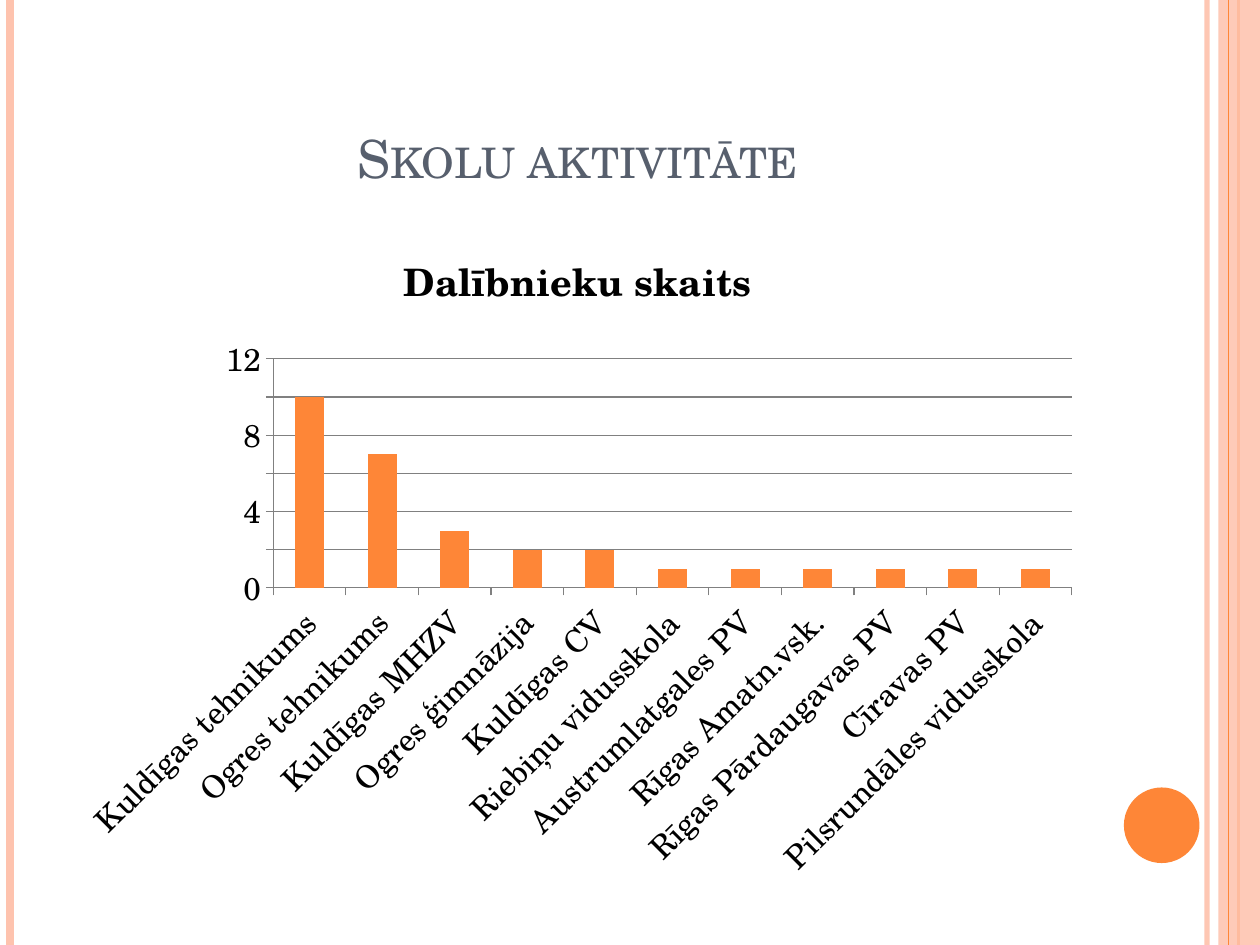
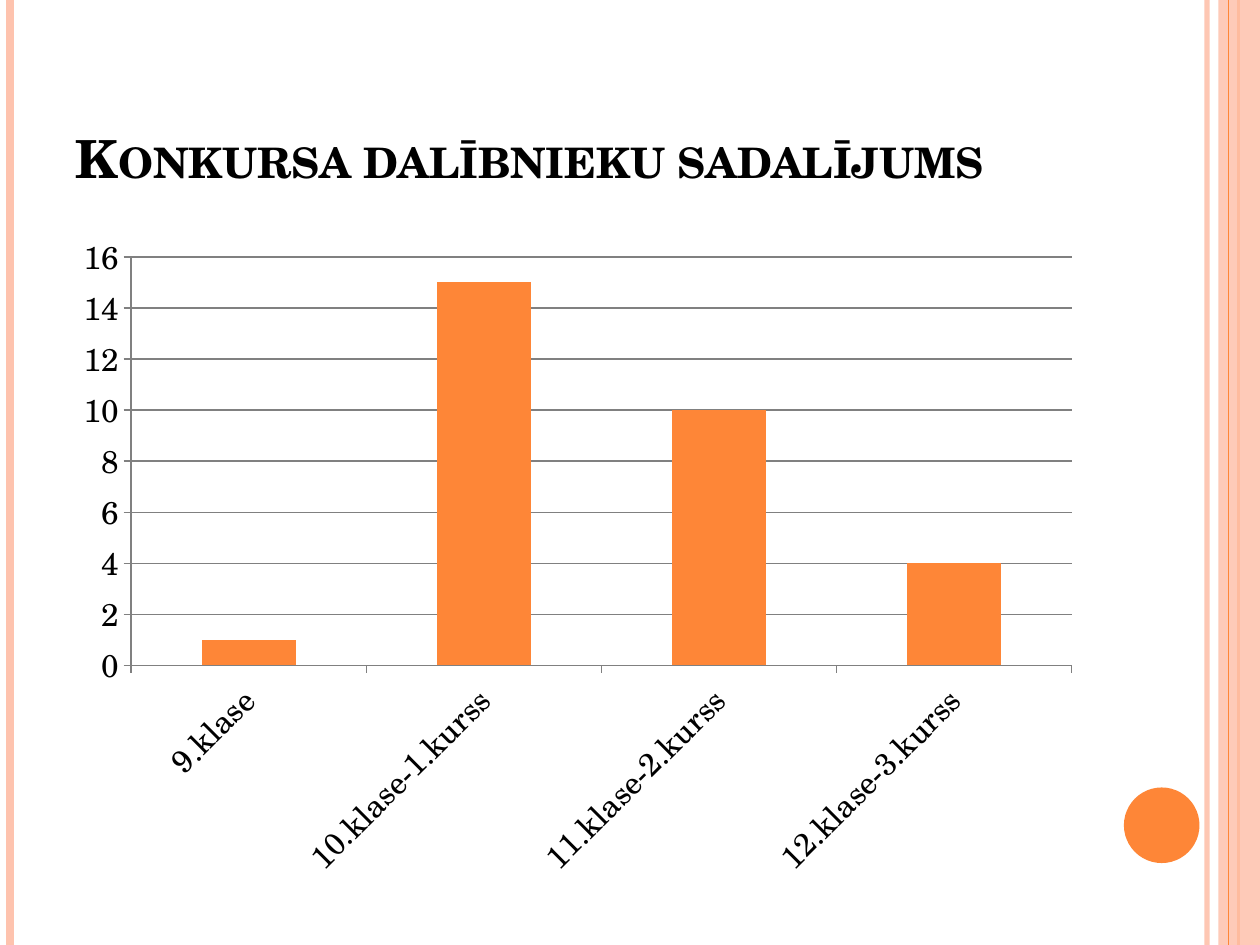
from dataclasses import dataclass

from lxml import etree
from pptx import Presentation
from pptx import util as u
from pptx.chart.data import CategoryChartData
from pptx.dml.color import RGBColor
from pptx.enum import chart as ch
from pptx.enum import shapes, text
from pptx.oxml.ns import qn

PX = 9144  # 100 px to the inch
WIDE, HIGH = 1000, 750
FONT = "TeX Gyre Schola"
HUES = {
    "orange": "FE8637",
    "peach": "FEC3AE",
    "slate": "575F6D",
    "black": "000000",
    "grid": "808080",
}


@dataclass
class Rule:
    x: int
    hue: str
    width: float
    alpha: int = 100


@dataclass
class Form:
    kind: shapes.MSO_SHAPE
    box: tuple[int, int, int, int]
    hue: str
    alpha: int = 100


@dataclass
class Page:
    title: str
    style: dict
    data: dict[str, int]
    head: str = ""


# Shared bands, from back to front
FRAME = [
    Rule(958, "peach", 3, 93),
    Rule(8, "peach", 4.5),
    Rule(983, "orange", 1.5),
    Form(shapes.MSO_SHAPE.RECTANGLE, (967, 0, 33, HIGH), "peach", 87),
    Rule(975, "orange", 0.75),
    Form(shapes.MSO_SHAPE.OVAL, (892, 625, 60, 60), "orange"),
]

PAGES = [
    Page(
        "Skolu aktivitāte",
        {"hue": "slate", "align": text.PP_ALIGN.CENTER},
        {
            "Kuldīgas tehnikums": 10,
            "Ogres tehnikums": 7,
            "Kuldīgas MHZV": 3,
            "Ogres ģimnāzija": 2,
            "Kuldīgas CV": 2,
            "Riebiņu vidusskola": 1,
            "Austrumlatgales PV": 1,
            "Rīgas Amatn.vsk.": 1,
            "Rīgas Pārdaugavas PV": 1,
            "Cīravas PV": 1,
            "Pilsrundāles vidusskola": 1,
        },
        "Dalībnieku skaits",
    ),
    Page(
        "Konkursa dalībnieku sadalījums",
        {"bold": True},
        {
            "9.klase": 1,
            "10.klase-1.kurss": 15,
            "11.klase-2.kurss": 10,
            "12.klase-3.kurss": 4,
        },
    ),
]


def px(*vals: int) -> list[u.Emu]:
    return [u.Emu(v * PX) for v in vals]


def rgb(hue: str) -> RGBColor:
    return RGBColor.from_string(HUES[hue])


def fade(item, alpha: int) -> None:
    """Set the opacity of the first colour in a shape."""
    if alpha < 100:
        tone = item._element.spPr.find(".//" + qn("a:srgbClr"))
        etree.SubElement(tone, qn("a:alpha")).set("val", str(alpha * 1000))


def ink(font, size: float, hue: str = "black", bold: bool = False) -> None:
    font.name, font.size, font.bold = FONT, u.Pt(size), bold
    font.color.rgb = rgb(hue)


def write(frame, words: str, *, size: float, hue: str = "black",
          bold: bool = False, caps: bool = False, align=None) -> None:
    para = frame.paragraphs[0]
    para.alignment = align
    run = para.add_run()
    run.text = words
    ink(run.font, size, hue, bold)
    if caps:
        run._r.get_or_add_rPr().set("cap", "small")


def draw_rule(slide, rule: Rule) -> None:
    line = slide.shapes.add_connector(
        shapes.MSO_CONNECTOR.STRAIGHT, *px(rule.x, 0, rule.x, HIGH))
    line.line.color.rgb = rgb(rule.hue)
    line.line.width = u.Pt(rule.width)
    fade(line, rule.alpha)
    etree.SubElement(line._element.spPr, qn("a:effectLst"))


def draw_form(slide, form: Form) -> None:
    item = slide.shapes.add_shape(form.kind, *px(*form.box))
    item.shadow.inherit = False
    item.fill.solid()
    item.fill.fore_color.rgb = rgb(form.hue)
    item.line.fill.background()
    fade(item, form.alpha)


def draw_title(slide, page: Page) -> None:
    frame = slide.shapes.add_textbox(*px(50, 30, 817, 125)).text_frame
    frame.word_wrap = True
    frame.vertical_anchor = text.MSO_ANCHOR.BOTTOM
    write(frame, page.title, size=30, caps=True, **page.style)


def draw_chart(slide, page: Page) -> None:
    data = CategoryChartData()
    data.categories = list(page.data)
    data.add_series("Series 1", list(page.data.values()))
    chart = slide.shapes.add_chart(
        ch.XL_CHART_TYPE.COLUMN_CLUSTERED, *px(50, 175, 817, 533), data).chart
    ink(chart.font, 18)
    chart.has_legend = False
    chart.has_title = bool(page.head)
    if page.head:
        write(chart.chart_title.text_frame, page.head, size=21.6, bold=True)

    # Columns
    plot = chart.plots[0]
    plot.gap_width = 150
    plot.vary_by_categories = False
    fill = plot.series[0].format.fill
    fill.solid()
    fill.fore_color.rgb = rgb("orange")

    # Axes and grid
    cats, vals = chart.category_axis, chart.value_axis
    vals.minimum_scale, vals.major_unit = 0, 2
    vals.has_major_gridlines = True
    for part in (cats, vals, vals.major_gridlines):
        part.format.line.color.rgb = rgb("grid")
        part.format.line.width = u.Pt(0.75)
    for axis in (cats, vals):
        axis.major_tick_mark = ch.XL_TICK_MARK.OUTSIDE
        ink(axis.tick_labels.font, 18)
    cats._element.find(".//" + qn("a:bodyPr")).set("rot", "-2700000")


def main() -> None:
    deck = Presentation()
    deck.slide_width, deck.slide_height = px(WIDE, HIGH)
    for page in PAGES:
        slide = deck.slides.add_slide(deck.slide_layouts[6])
        for part in FRAME:
            draw = draw_rule if isinstance(part, Rule) else draw_form
            draw(slide, part)
        draw_title(slide, page)
        draw_chart(slide, page)
    deck.save("out.pptx")


if __name__ == "__main__":
    main()
